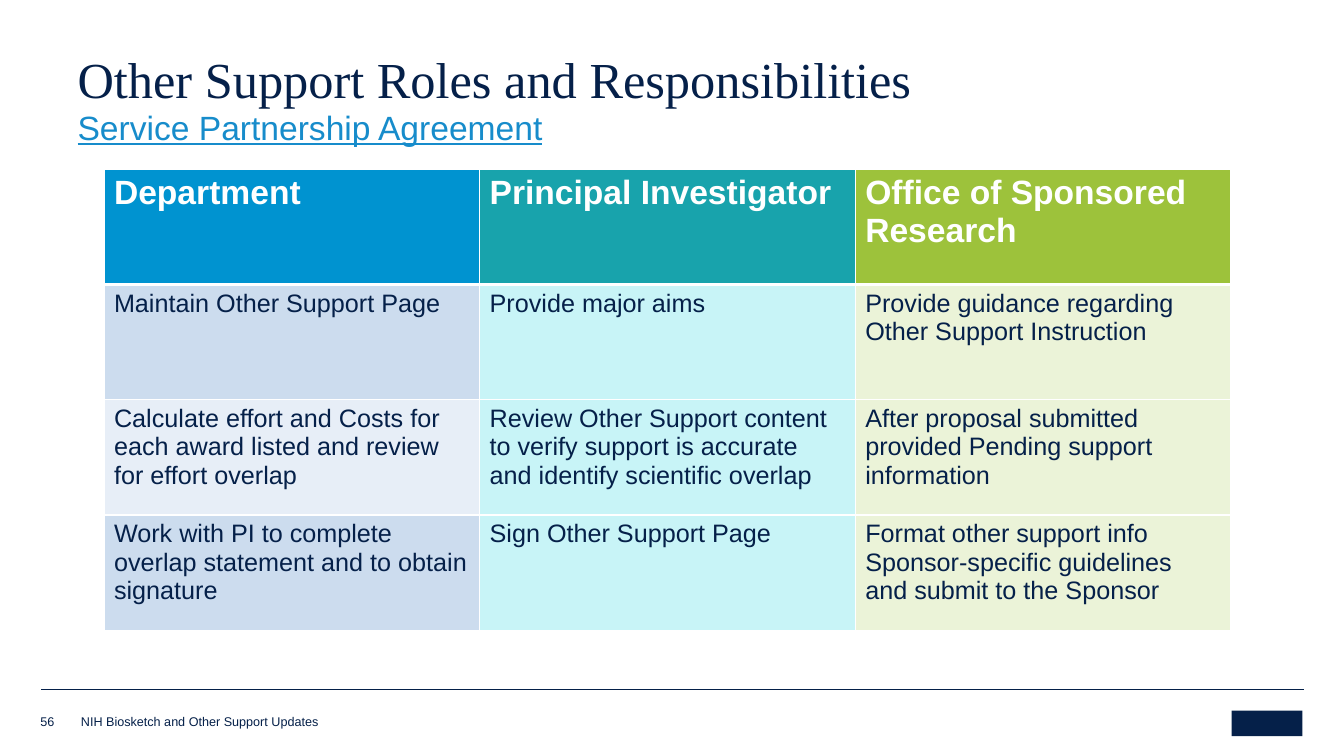
import pptx
import pptx.dml.color
import pptx.enum.shapes
import pptx.enum.text
import pptx.oxml
import pptx.oxml.ns
import pptx.util
from pptx.util import Cm

COLORS = {
    "navy": "052049",
    "link": "178CCB",
    "white": "FFFFFF",
    "department": "0093D0",
    "department_tint": "CCDCEE",
    "department_light": "E7EEF7",
    "investigator": "18A3AC",
    "investigator_tint": "C8F4F7",
    "office": "9DC23B",
    "office_tint": "EBF3D8",
}
ROLES = [
    ("Department", "Principal Investigator", "Office of Sponsored Research"),
    ("Maintain Other Support Page", "Provide major aims",
     "Provide guidance regarding Other Support Instruction"),
    ("Calculate effort and Costs for each award listed and review for effort overlap",
     "Review Other Support content to verify support is accurate and identify scientific overlap",
     "After proposal submitted provided Pending support information"),
    ("Work with PI to complete overlap statement and to obtain signature",
     "Sign Other Support Page",
     "Format other support info Sponsor-specific guidelines and submit to the Sponsor"),
]
ROW_FILLS = [
    ("department", "investigator", "office"),
    ("department_tint", "investigator_tint", "office_tint"),
    ("department_light", "investigator_tint", "office_tint"),
    ("department_tint", "investigator_tint", "office_tint"),
]
TITLE = {"size": 36, "name": "Times New Roman", "color": "navy"}
SUBTITLE = {"size": 24, "color": "link", "underline": True}
HEADER = {"size": 24, "color": "white", "bold": True}
BODY = {"size": 18, "color": "navy", "bold": False}
FOOTER = {"size": 9, "color": "navy"}
BOTTOM = pptx.enum.text.MSO_ANCHOR.BOTTOM


def rgb(color):
    return pptx.dml.color.RGBColor.from_string(COLORS[color])


def write(text_frame, text, style):
    """Put one left-aligned paragraph in the frame and return it."""
    text_frame.word_wrap = True
    paragraph = text_frame.paragraphs[0]
    paragraph.alignment = pptx.enum.text.PP_ALIGN.LEFT
    run = paragraph.add_run()
    run.text = text
    for attribute, value in {"name": "Arial", **style}.items():
        if attribute == "color":
            run.font.color.rgb = rgb(value)
        else:
            setattr(run.font, attribute, pptx.util.Pt(value) if attribute == "size" else value)
    return paragraph


def place(shape, left, top, width, height):
    for side, length in zip(("left", "top", "width", "height"), (left, top, width, height)):
        setattr(shape, side, Cm(length))


def add_heading(slide, left, top, width):
    title, subtitle = slide.shapes.title, slide.placeholders[1]
    place(title, left, top, width, 1.7)
    place(subtitle, left, top + 1.4, width, 1.24)
    for shape in (title, subtitle):
        shape.text_frame.auto_size = pptx.enum.text.MSO_AUTO_SIZE.NONE
    title.text_frame.vertical_anchor = BOTTOM
    write(title.text_frame, "Other Support Roles and Responsibilities", TITLE).line_spacing = 0.85

    paragraph = write(subtitle.text_frame, "Service Partnership Agreement", SUBTITLE)
    paragraph.space_before = pptx.util.Pt(0)
    paragraph.space_after = pptx.util.Pt(6)
    properties = paragraph._p.get_or_add_pPr()
    properties.set("marL", "0")
    properties.set("indent", "0")
    properties.append(pptx.oxml.parse_xml(f'<a:buNone {pptx.oxml.ns.nsdecls("a")}/>'))


def add_cell_border(cell, side, points):
    cell._tc.get_or_add_tcPr().append(pptx.oxml.parse_xml(
        f'<a:ln{side} {pptx.oxml.ns.nsdecls("a")} w="{pptx.util.Pt(points)}"><a:solidFill>'
        f'<a:srgbClr val="{COLORS["white"]}"/></a:solidFill></a:ln{side}>'))


def add_roles_table(slide, left, top, width, height):
    frame = slide.shapes.add_table(len(ROLES), len(ROLES[0]), Cm(left), Cm(top), Cm(width), Cm(height))
    table = frame.table
    table.horz_banding = False
    for row, (texts, fills) in enumerate(zip(ROLES, ROW_FILLS)):
        for column, (text, fill) in enumerate(zip(texts, fills)):
            cell = table.cell(row, column)
            for side in "LRTB":
                below_header = (row, side) in ((0, "B"), (1, "T"))
                add_cell_border(cell, side, 3 if below_header else 1)
            cell.fill.solid()
            cell.fill.fore_color.rgb = rgb(fill)
            write(cell.text_frame, text, BODY if row else HEADER)


def add_footer_text(slide, text, left, top, width, height):
    box = slide.shapes.add_textbox(Cm(left), Cm(top), Cm(width), Cm(height))
    frame = box.text_frame
    for side in ("left", "top", "right", "bottom"):
        setattr(frame, f"margin_{side}", 0)
    frame.vertical_anchor = BOTTOM
    write(frame, text, FOOTER)


def add_footer(slide, left, top, width):
    """Rule across the box, with page number, deck name and emblem under it."""
    rule = slide.shapes.add_connector(pptx.enum.shapes.MSO_CONNECTOR.STRAIGHT,
                                      Cm(left), Cm(top), Cm(left + width), Cm(top))
    rule.line.color.rgb = rgb("navy")
    rule.line.width = pptx.util.Pt(0.25)
    rule._element.spPr.append(pptx.oxml.parse_xml(f'<a:effectLst {pptx.oxml.ns.nsdecls("a")}/>'))

    add_footer_text(slide, "56", left - 0.02, top + 0.56, 0.91, 0.43)
    add_footer_text(slide, "NIH Biosketch and Other Support Updates", left + 1, top + 0.61, 15.98, 0.38)

    emblem = slide.shapes.add_shape(pptx.enum.shapes.MSO_SHAPE.RECTANGLE,
                                    Cm(left + width - 1.83), Cm(top + 0.54), Cm(1.78), Cm(0.64))
    emblem.shadow.inherit = False
    emblem.fill.solid()
    emblem.fill.fore_color.rgb = rgb("navy")
    emblem.line.fill.background()


def main():
    presentation = pptx.Presentation()
    presentation.slide_width, presentation.slide_height = Cm(33.87), Cm(19.05)
    slide = presentation.slides.add_slide(presentation.slide_layouts[1])
    add_footer(slide, 1.04, 17.37, 31.83)
    add_heading(slide, 1.7, 1.17, 30.25)
    add_roles_table(slide, 2.62, 4.27, 28.4, 11.61)
    presentation.save("out.pptx")


if __name__ == "__main__":
    main()
